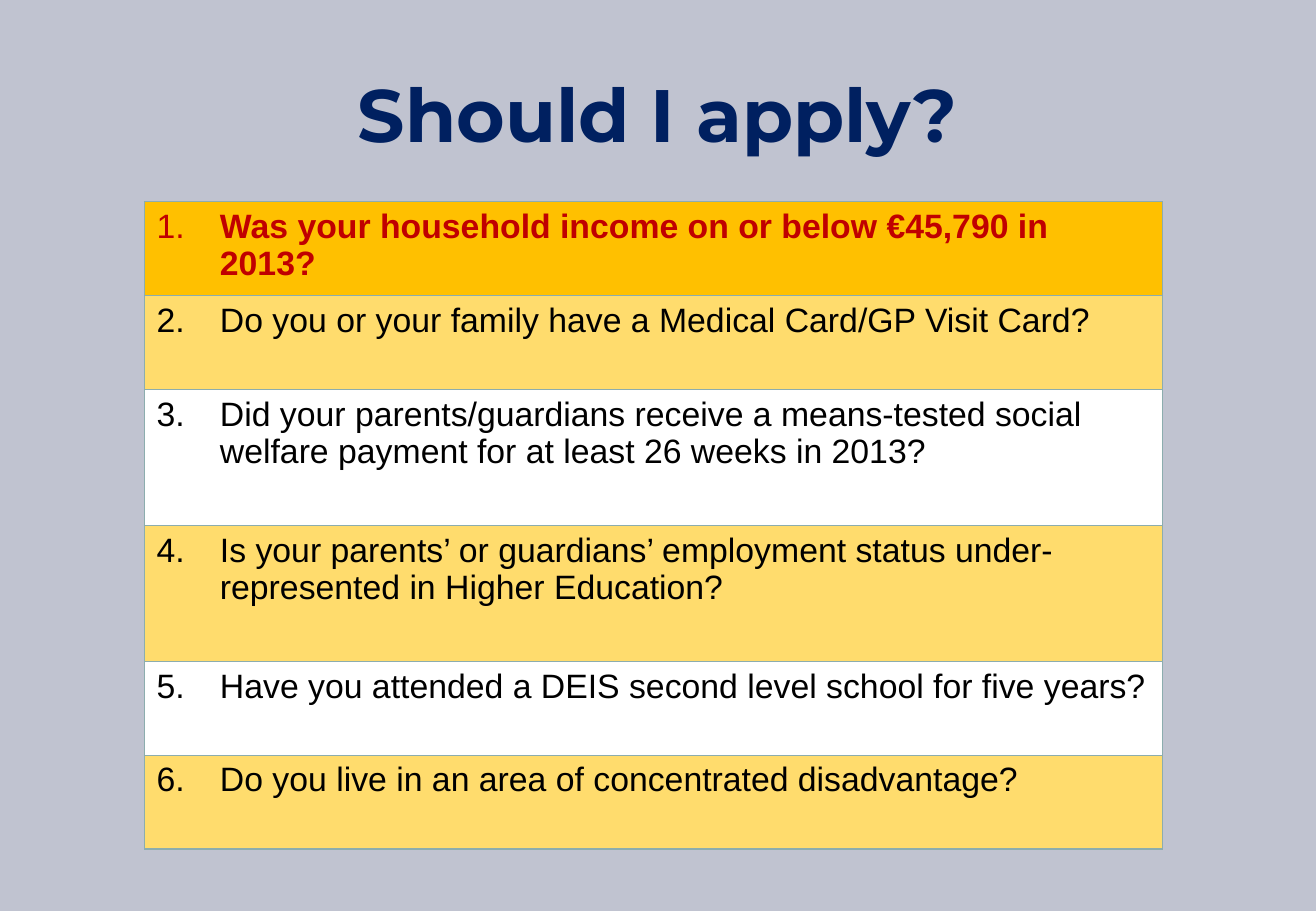
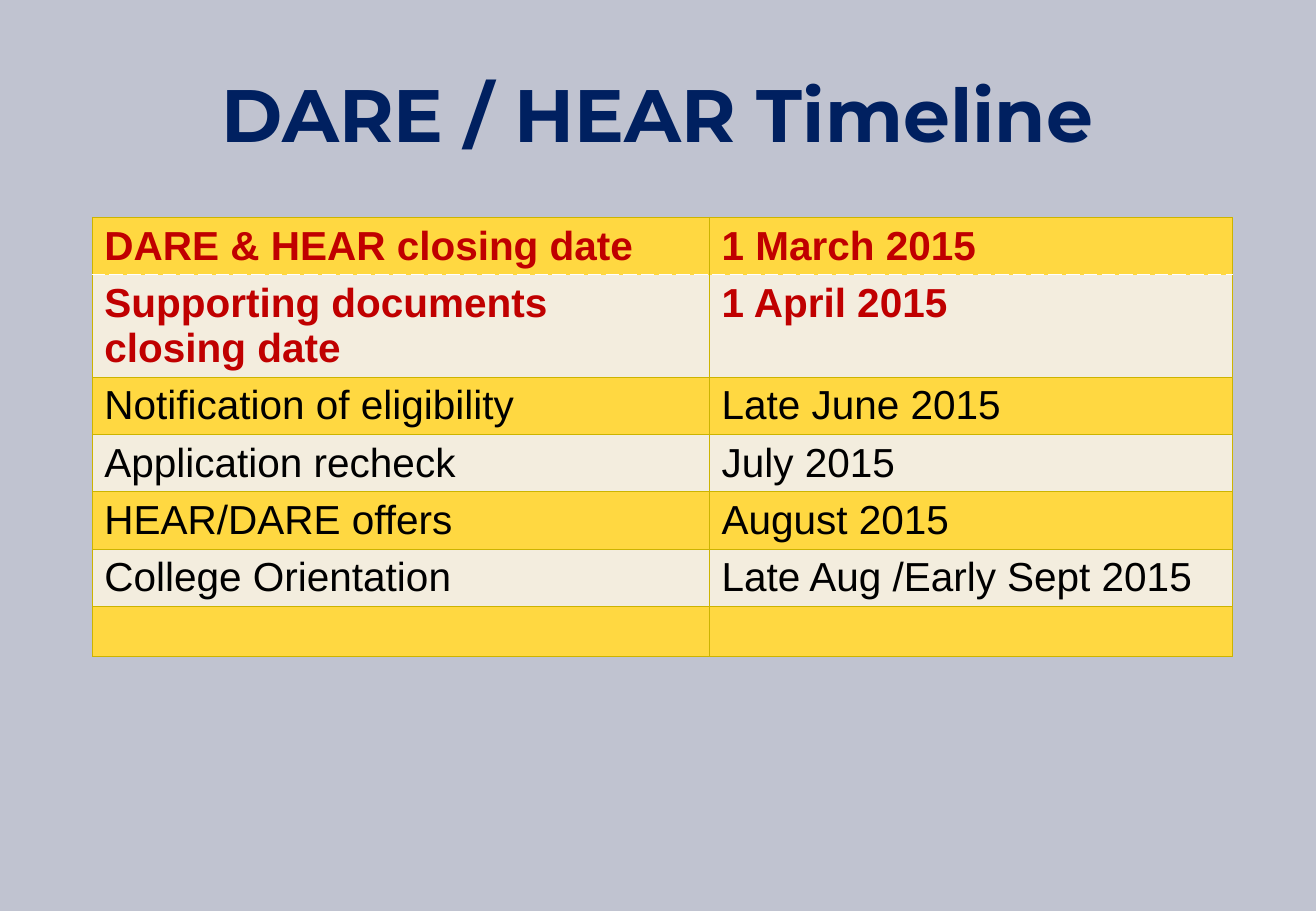
from dataclasses import dataclass
from typing import Optional

from lxml import etree
from pptx import Presentation
from pptx.dml.color import RGBColor
from pptx.enum import text
from pptx.oxml import ns
from pptx.util import Pt

GREY_BLUE = RGBColor(0xC0, 0xC3, 0xD0)
NAVY = RGBColor(0x00, 0x20, 0x60)
RED = RGBColor(0xC0, 0x00, 0x00)
BLACK = RGBColor(0x00, 0x00, 0x00)
WHITE = RGBColor(0xFF, 0xFF, 0xFF)
AMBER = RGBColor(0xFF, 0xC0, 0x00)
PALE_AMBER = RGBColor(0xFF, 0xDC, 0x6D)
YELLOW = RGBColor(0xFF, 0xD8, 0x41)
CREAM = RGBColor(0xF3, 0xED, 0xDE)
TEAL = RGBColor(0x8C, 0xAD, 0xAE)
OLIVE = RGBColor(0xCC, 0xB4, 0x00)

TITLE_FONT = "Montserrat"
BODY_FONT = "Arial"


@dataclass(frozen=True)
class Border:
    color: RGBColor
    width: float
    dash: str = "solid"


@dataclass(frozen=True)
class Row:
    texts: tuple[str, str]
    height: float
    fill: RGBColor
    color: RGBColor = BLACK
    bold: tuple[bool, bool] = (False, False)


@dataclass(frozen=True)
class Grid:
    left: float
    top: float
    columns: tuple[float, float]
    size: float
    rows: list[Row]
    border: Border
    divider: Optional[Border] = None
    header_rule: Optional[Border] = None


TEAL_LINE = Border(TEAL, 1)
OLIVE_LINE = Border(OLIVE, 0.75)
WHITE_DASHES = Border(WHITE, 0.9, "sysDash")

QUESTIONS = Grid(
    85.7, 119.5, (37.5, 566), 20,
    [
        Row(("1.", "Was your household income on or below €45,790 in 2013?"),
            55.7, AMBER, RED, (False, True)),
        Row(("2.", "Do you or your family have a Medical Card/GP Visit Card?"),
            55.7, PALE_AMBER),
        Row(("3.", "Did your parents/guardians receive a means-tested social "
                   "welfare payment for at least 26 weeks in 2013?"),
            80.6, WHITE),
        Row(("4.", "Is your parents’ or guardians’ employment status "
                   "under-represented in Higher Education?"),
            80.6, PALE_AMBER),
        Row(("5.", "Have you attended a DEIS second level school for five years?"),
            55.7, WHITE),
        Row(("6.", "Do you live in an area of concentrated disadvantage?"),
            55.7, PALE_AMBER),
    ],
    TEAL_LINE,
)

TIMELINE = Grid(
    54.7, 128.8, (365.8, 309.9), 24,
    [
        Row(("DARE & HEAR closing date", "1 March 2015"),
            33.9, YELLOW, RED, (True, True)),
        Row(("Supporting documents closing date", "1 April 2015"),
            60.5, CREAM, RED, (True, True)),
        Row(("Notification of eligibility", "Late June 2015"), 33.9, YELLOW),
        Row(("Application recheck", "July 2015"), 33.9, CREAM),
        Row(("HEAR/DARE offers", "August 2015"), 33.9, YELLOW),
        Row(("College Orientation", "Late Aug /Early Sept 2015"), 33.9, CREAM),
        Row(("", ""), 29.6, YELLOW),
    ],
    OLIVE_LINE, OLIVE_LINE, WHITE_DASHES,
)


def set_border(cell, side: str, border: Optional[Border]) -> None:
    properties = cell._tc.get_or_add_tcPr()
    line = etree.SubElement(properties, ns.qn(f"a:ln{side}"))
    if border is None:
        etree.SubElement(line, ns.qn("a:noFill"))
        return
    line.set("w", str(int(Pt(border.width))))
    fill = etree.SubElement(line, ns.qn("a:solidFill"))
    etree.SubElement(fill, ns.qn("a:srgbClr")).set("val", str(border.color))
    etree.SubElement(line, ns.qn("a:prstDash")).set("val", border.dash)


def add_span(para, words: str, font: str, size: float,
             color: RGBColor, bold: bool) -> None:
    span = para.add_run()
    span.text = words
    span.font.name = font
    span.font.size = Pt(size)
    span.font.color.rgb = color
    span.font.bold = bold


def add_grid(page, grid: Grid) -> None:
    frame = page.shapes.add_table(
        len(grid.rows), len(grid.columns), Pt(grid.left), Pt(grid.top),
        Pt(sum(grid.columns)), Pt(sum(row.height for row in grid.rows)))
    table = frame.table
    table.first_row = False
    table.horz_banding = False
    for column, width in zip(table.columns, grid.columns):
        column.width = Pt(width)
    header_rule = grid.header_rule or grid.border
    for index, row in enumerate(grid.rows):
        table.rows[index].height = Pt(row.height)
        for position, words in enumerate(row.texts):
            cell = table.cell(index, position)
            borders = {
                "L": grid.border if position == 0 else grid.divider,
                "R": grid.divider if position == 0 else grid.border,
                "T": header_rule if index == 1 else grid.border,
                "B": header_rule if index == 0 else grid.border,
            }
            for side, border in borders.items():
                set_border(cell, side, border)
            cell.fill.solid()
            cell.fill.fore_color.rgb = row.fill
            if words:
                add_span(cell.text_frame.paragraphs[0], words, BODY_FONT,
                         grid.size, row.color, row.bold[position])


def add_page(deck, heading: str, grid: Grid) -> None:
    page = deck.slides.add_slide(deck.slide_layouts.get_by_name("Title Only"))
    page.background.fill.solid()
    page.background.fill.fore_color.rgb = GREY_BLUE
    title = page.shapes.title
    title.left, title.top = Pt(39), Pt(21.6)
    title.width, title.height = Pt(702), Pt(90)
    title.text_frame.vertical_anchor = text.MSO_ANCHOR.MIDDLE
    para = title.text_frame.paragraphs[0]
    para.alignment = text.PP_ALIGN.CENTER
    add_span(para, heading, TITLE_FONT, 44, NAVY, True)
    add_grid(page, grid)


def main() -> None:
    deck = Presentation()
    deck.slide_width, deck.slide_height = Pt(780), Pt(540)
    add_page(deck, "Should I apply?", QUESTIONS)
    add_page(deck, "DARE / HEAR Timeline", TIMELINE)
    deck.save("out.pptx")


if __name__ == "__main__":
    main()
